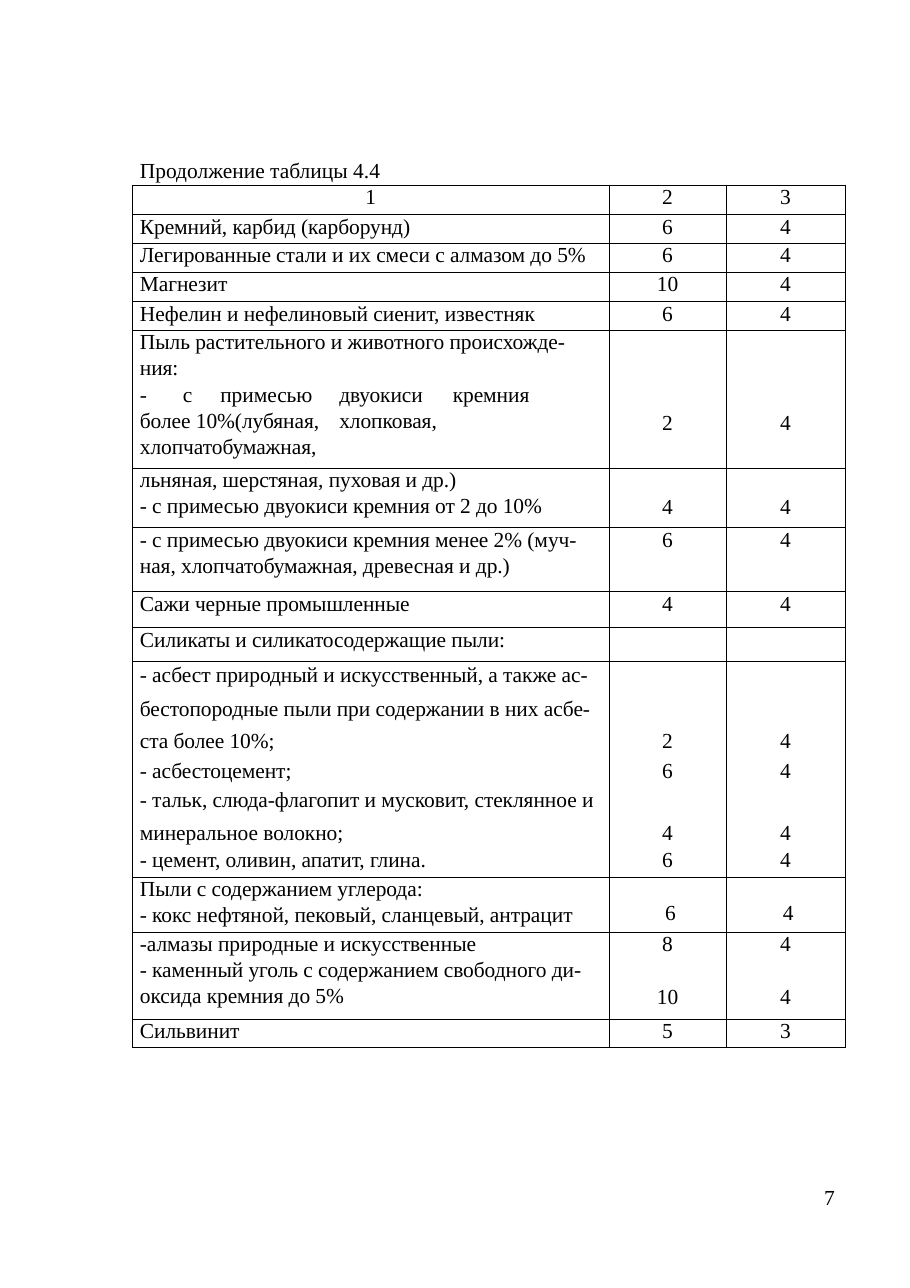
from lxml.etree import SubElement
from pptx import Presentation
from pptx.dml.color import RGBColor
from pptx.enum.text import MSO_ANCHOR, MSO_AUTO_SIZE, PP_ALIGN
from pptx.oxml.ns import qn
from pptx.util import Inches, Pt

COLORS = {"text": "000000", "border": "000000"}
FONT = "Times New Roman"
FIRST_LINE, LOOSE_LINE, NEXT_LINE = 15.8, 16.8, 17
COLUMN_WIDTHS = [4.33, 1.06, 1.08]
TEXT_INDENT = 0.07
TAB_STOPS = [0.39, 0.73, 1.81, 2.84]

# Height, cell texts, height of the first line, space above the values
ROWS = [
    (0.27, ("1", "2", "3"), FIRST_LINE, 0),
    (0.26, ("Кремний, карбид (карборунд)", "6", "4"), FIRST_LINE, 0),
    (0.26, ("Легированные стали и их смеси с алмазом до 5%", "6", "4"), FIRST_LINE, 0),
    (0.27, ("Магнезит", "10", "4"), FIRST_LINE, 0),
    (0.26, ("Нефелин и нефелиновый сиенит, известняк", "6", "4"), FIRST_LINE, 0),
    (1.25, ("Пыль растительного и животного происхожде-\nния:\n"
            "-\tс\tпримесью\tдвуокиси\tкремния\v"
            "более 10%(лубяная,\tхлопковая,\vхлопчатобумажная,", "2", "4"), FIRST_LINE, 0.73),
    (0.54, ("льняная, шерстяная, пуховая и др.)\n"
            "- с примесью двуокиси кремния от 2 до 10%", "4", "4"), FIRST_LINE, 0.24),
    (0.58, ("- с примесью двуокиси кремния менее 2% (муч-\n"
            "ная, хлопчатобумажная, древесная и др.)", "6", "4"), FIRST_LINE, 0),
    (0.33, ("Сажи черные промышленные", "4", "4"), FIRST_LINE, 0),
    (0.24, ("Силикаты и силикатосодержащие пыли:", "", ""), FIRST_LINE, 0),
    (0.26, ("- асбест природный и искусственный, а также ас-", "", ""), LOOSE_LINE, 0),
    (0.26, ("бестопородные пыли при содержании в них асбе-", "", ""), LOOSE_LINE, 0),
    (0.26, ("ста более 10%;", "2", "4"), FIRST_LINE, 0),
    (0.26, ("- асбестоцемент;", "6", "4"), LOOSE_LINE, 0),
    (0.26, ("- тальк, слюда-флагопит и мусковит, стеклянное и", "", ""), LOOSE_LINE, 0),
    (0.26, ("минеральное волокно;", "4", "4"), LOOSE_LINE, 0),
    (0.26, ("- цемент, оливин, апатит, глина.", "6", "4"), FIRST_LINE, 0),
    (0.5, ("Пыли с содержанием углерода:\n"
           "- кокс нефтяной, пековый, сланцевый, антрацит", "6", "4"), FIRST_LINE, 0.22),
    (0.79, ("-алмазы природные и искусственные\n"
            "- каменный уголь с содержанием свободного ди-\vоксида кремния до 5%",
            "8\n10", "4\n4"), FIRST_LINE, 0),
    (0.26, ("Сильвинит", "5", "3"), FIRST_LINE, 0),
]
ASBESTOS_FIRST, ASBESTOS_LAST, COKE_ROW = 10, 16, 17


def format_text(text_frame, alignment, first_line, next_line=NEXT_LINE, tracking=0):
    for index, paragraph in enumerate(text_frame.paragraphs):
        paragraph.alignment = alignment
        paragraph.line_spacing = Pt(next_line if index else first_line)
        for run in paragraph.runs:
            run.font.name = FONT
            run.font.size = Pt(14)
            run.font.color.rgb = RGBColor.from_string(COLORS["text"])
            if tracking:
                run.font._element.set("spc", str(tracking))


def add_border(cell, side, visible):
    line = SubElement(cell._tc.get_or_add_tcPr(), qn(f"a:ln{side}"), w=str(Pt(0.5)))
    if visible:
        fill = SubElement(line, qn("a:solidFill"))
        SubElement(fill, qn("a:srgbClr"), val=COLORS["border"])
    else:
        SubElement(line, qn("a:noFill"))


presentation = Presentation()
presentation.slide_width = Inches(8.26)
presentation.slide_height = Inches(11.69)
slide = presentation.slides.add_slide(presentation.slide_layouts[5])

title = slide.shapes.title
title.left, title.top = Inches(1.27), Inches(1.43)
title.width, title.height = Inches(2.4), Inches(0.26)
page_number = slide.shapes.add_textbox(Inches(7.48), Inches(10.75), Inches(0.25), Inches(0.24))
for shape, text in [(title, "Продолжение таблицы 4.4"), (page_number, "7")]:
    text_frame = shape.text_frame
    text_frame.text = text
    text_frame.word_wrap = True
    text_frame.auto_size = MSO_AUTO_SIZE.NONE
    text_frame.vertical_anchor = MSO_ANCHOR.TOP
    text_frame.margin_left = text_frame.margin_right = 0
    text_frame.margin_top = text_frame.margin_bottom = 0
    format_text(text_frame, PP_ALIGN.LEFT, 16.3)

table_height = sum(row[0] for row in ROWS)
table = slide.shapes.add_table(
    len(ROWS), len(COLUMN_WIDTHS), Inches(1.2), Inches(1.68),
    Inches(sum(COLUMN_WIDTHS)), Inches(table_height)).table
table.first_row = False
table.horz_banding = False
for column, width in zip(table.columns, COLUMN_WIDTHS):
    column.width = Inches(width)

for row_index, (height, texts, first_line, value_offset) in enumerate(ROWS):
    table.rows[row_index].height = Inches(height)
    open_top = ASBESTOS_FIRST < row_index <= ASBESTOS_LAST
    open_bottom = ASBESTOS_FIRST <= row_index < ASBESTOS_LAST
    for column_index, text in enumerate(texts):
        cell = table.cell(row_index, column_index)
        cell.margin_left = cell.margin_right = cell.margin_top = cell.margin_bottom = 0
        cell.vertical_anchor = MSO_ANCHOR.TOP
        cell.text_frame.text = text
        paragraphs = cell.text_frame.paragraphs
        if column_index == 0 and row_index > 0:
            cell.margin_left = Inches(TEXT_INDENT)
            format_text(cell.text_frame, PP_ALIGN.LEFT, first_line, tracking=-6)
        else:
            format_text(cell.text_frame, PP_ALIGN.CENTER, first_line)
            cell.margin_top = Inches(value_offset)
            if row_index == COKE_ROW:
                cell.margin_left = Inches(0.05)
            for paragraph in paragraphs[1:]:
                paragraph.space_before = Pt(17.6)
        if "\t" in text:
            properties = paragraphs[-1]._p.get_or_add_pPr()
            tab_list = SubElement(properties, qn("a:tabLst"))
            for position in TAB_STOPS:
                SubElement(tab_list, qn("a:tab"), pos=str(Inches(position)), algn="l")
        for side, visible in [("L", True), ("R", True), ("T", not open_top), ("B", not open_bottom)]:
            add_border(cell, side, visible)
        cell.fill.background()

presentation.save("out.pptx")
